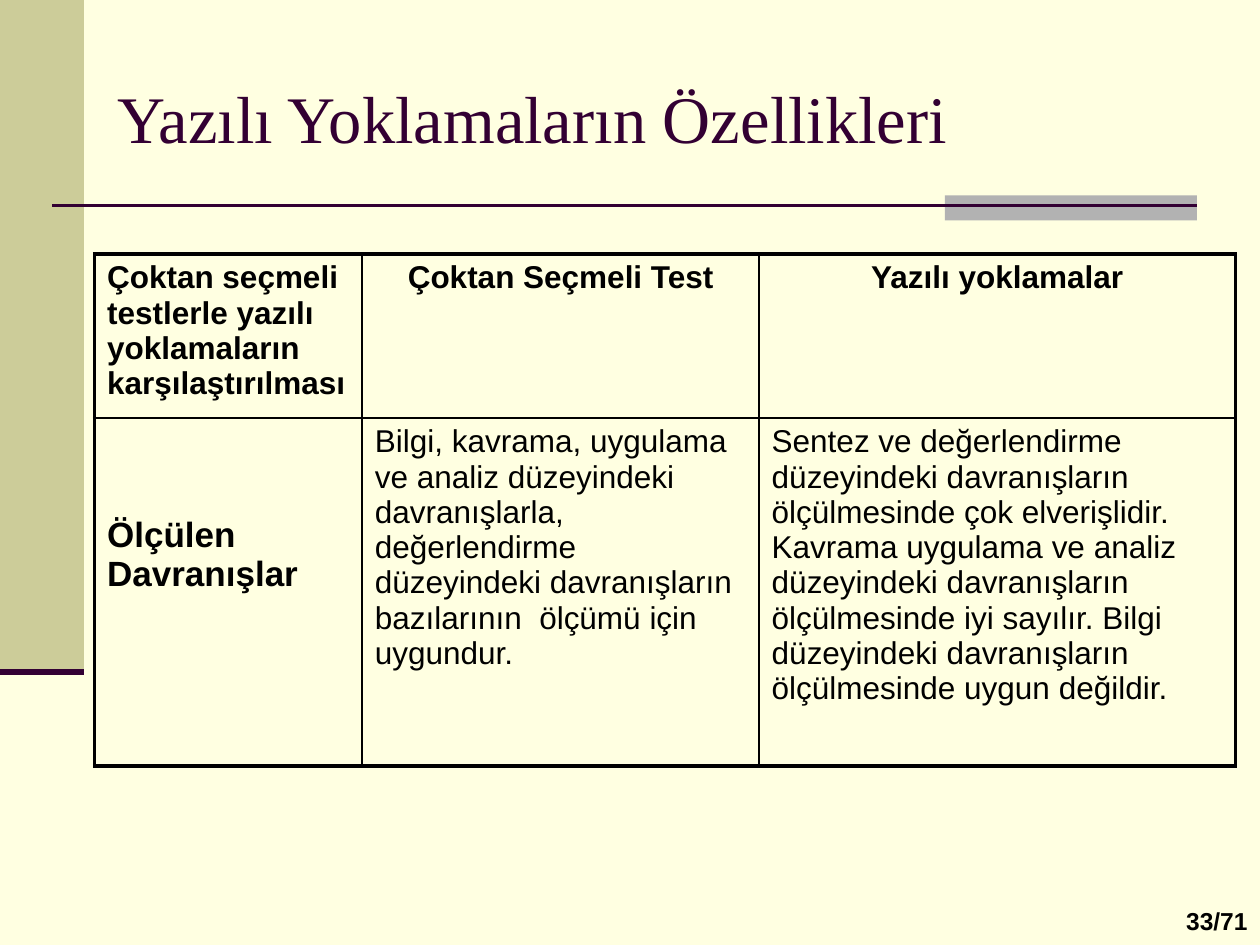
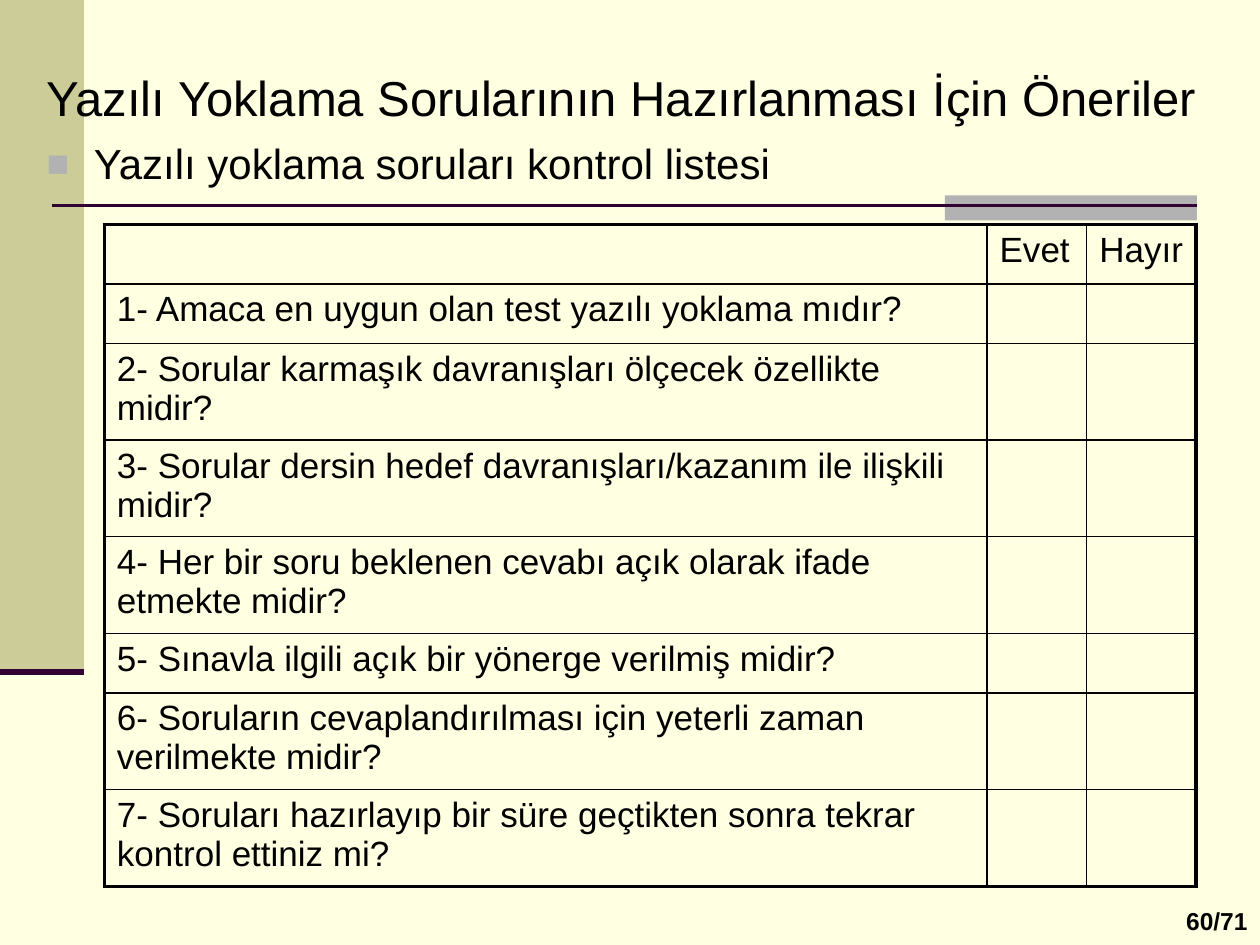
from lxml import etree
from pptx import Presentation
from pptx.dml.color import RGBColor
from pptx.enum import shapes, text
from pptx.oxml import ns
from pptx.util import Pt

CREAM = RGBColor(0xFF, 0xFF, 0xE1)
KHAKI = RGBColor(0xCC, 0xCC, 0x99)
GREY = RGBColor(0xB2, 0xB2, 0xB2)
PLUM = RGBColor(0x33, 0x00, 0x33)
BLACK = RGBColor(0x00, 0x00, 0x00)
LEFT, CENTER, RIGHT = text.PP_ALIGN.LEFT, text.PP_ALIGN.CENTER, text.PP_ALIGN.RIGHT
OUTER, INNER = 2.25, 1


def write(paragraph, words, size, bold=False, color=BLACK, font="Arial", align=LEFT):
    paragraph.text = words
    paragraph.alignment = align
    for span in paragraph.runs:
        span.font.size = Pt(size)
        span.font.bold = bold
        span.font.name = font
        span.font.color.rgb = color


def add_grid(slide, left, top, widths, heights):
    """Add an unfilled table with a heavy frame and thin inner lines."""
    frame = slide.shapes.add_table(len(heights), len(widths), Pt(left), Pt(top),
                                   Pt(sum(widths)), Pt(sum(heights)))
    table = frame.table
    table.first_row = table.horz_banding = False
    for column, width in zip(table.columns, widths):
        column.width = Pt(width)
    for row, height in zip(table.rows, heights):
        row.height = Pt(height)
    last_row, last_column = len(heights) - 1, len(widths) - 1
    for r, row in enumerate(table.rows):
        for c, cell in enumerate(row.cells):
            on_frame = {"lnL": c == 0, "lnR": c == last_column,
                        "lnT": r == 0, "lnB": r == last_row}
            properties = cell._tc.get_or_add_tcPr()
            for side, heavy in on_frame.items():
                line = etree.SubElement(properties, ns.qn("a:" + side),
                                        w=str(Pt(OUTER if heavy else INNER)))
                fill = etree.SubElement(line, ns.qn("a:solidFill"))
                etree.SubElement(fill, ns.qn("a:srgbClr"), val=str(BLACK))
            cell.fill.background()
    return table


deck = Presentation()
deck.slide_width, deck.slide_height = Pt(720), Pt(540)

# Shared background, bands, rules and page number
for page_number in ("33/71", "60/71"):
    slide = deck.slides.add_slide(deck.slide_layouts[6])
    slide.background.fill.solid()
    slide.background.fill.fore_color.rgb = CREAM

    for left, top, width, height, color in ((0, 0, 48, 384, KHAKI),
                                            (540, 111.6, 144, 14.4, GREY)):
        band = slide.shapes.add_shape(shapes.MSO_SHAPE.RECTANGLE,
                                      Pt(left), Pt(top), Pt(width), Pt(height))
        band.shadow.inherit = False
        band.fill.solid()
        band.fill.fore_color.rgb = color
        band.line.fill.background()

    for start, end, y, weight in ((30, 684, 117.6, 1.5), (0, 48, 384, 3.5)):
        rule = slide.shapes.add_connector(shapes.MSO_CONNECTOR.STRAIGHT,
                                          Pt(start), Pt(y), Pt(end), Pt(y))
        rule.line.color.rgb = PLUM
        rule.line.width = Pt(weight)
        etree.SubElement(rule._element.spPr, ns.qn("a:effectLst"))

    number_box = slide.shapes.add_textbox(Pt(660), Pt(514), Pt(60), Pt(24))
    number_box.text_frame.word_wrap = True
    write(number_box.text_frame.paragraphs[0], page_number, 14, bold=True, align=RIGHT)

comparison_slide, checklist_slide = deck.slides

# Comparison of multiple choice and written tests
title_box = comparison_slide.shapes.add_textbox(Pt(60), Pt(21.6), Pt(660), Pt(90))
title_box.text_frame.word_wrap = True
title_box.text_frame.vertical_anchor = text.MSO_ANCHOR.MIDDLE
write(title_box.text_frame.paragraphs[0], "Yazılı Yoklamaların Özellikleri", 38,
      color=PLUM, font="Times New Roman")

comparison = add_grid(comparison_slide, 54, 145.2, (153, 226.8, 272.2), (90.4, 198.8))
headings = ("Çoktan seçmeli testlerle yazılı yoklamaların karşılaştırılması",
            "Çoktan Seçmeli Test", "Yazılı yoklamalar")
behaviours = (
    "Ölçülen Davranışlar",
    "Bilgi, kavrama, uygulama ve analiz düzeyindeki davranışlarla, değerlendirme "
    "düzeyindeki davranışların bazılarının  ölçümü için uygundur.",
    "Sentez ve değerlendirme düzeyindeki davranışların ölçülmesinde çok elverişlidir. "
    "Kavrama uygulama ve analiz düzeyindeki davranışların ölçülmesinde iyi sayılır. "
    "Bilgi düzeyindeki davranışların ölçülmesinde uygun değildir.")
for c, (heading, behaviour) in enumerate(zip(headings, behaviours)):
    write(comparison.cell(0, c).text_frame.paragraphs[0], heading, 18, bold=True,
          align=CENTER if c else LEFT)
    write(comparison.cell(1, c).text_frame.paragraphs[0], behaviour,
          18 if c else 20, bold=c == 0)
comparison.cell(1, 0).margin_top = Pt(56)

# Checklist for written test questions
heading_box = checklist_slide.shapes.add_textbox(Pt(19.6), Pt(31.8), Pt(686), Pt(79))
heading_frame = heading_box.text_frame
heading_frame.word_wrap = True
heading_frame.margin_top = Pt(6.7)
write(heading_frame.paragraphs[0],
      "Yazılı Yoklama Sorularının Hazırlanması İçin Öneriler", 28)
bullet = heading_frame.add_paragraph()
write(bullet, "Yazılı yoklama soruları kontrol listesi", 24)
bullet.space_before = Pt(6.7)
bullet_properties = bullet._p.get_or_add_pPr()
bullet_properties.set("marL", str(Pt(27)))
bullet_properties.set("indent", str(Pt(-27)))
bullet_color = etree.SubElement(bullet_properties, ns.qn("a:buClr"))
etree.SubElement(bullet_color, ns.qn("a:srgbClr"), val=str(GREY))
etree.SubElement(bullet_properties, ns.qn("a:buSzPct"), val="90000")
etree.SubElement(bullet_properties, ns.qn("a:buFont"), typeface="Arial")
etree.SubElement(bullet_properties, ns.qn("a:buChar"), char="■")

questions = (
    "1- Amaca en uygun olan test yazılı yoklama mıdır?",
    "2- Sorular karmaşık davranışları ölçecek özellikte midir?",
    "3- Sorular dersin hedef davranışları/kazanım ile ilişkili midir?",
    "4- Her bir soru beklenen cevabı açık olarak ifade etmekte midir?",
    "5- Sınavla ilgili açık bir yönerge verilmiş midir?",
    "6- Soruların cevaplandırılması için yeterli zaman verilmekte midir?",
    "7- Soruları hazırlayıp bir süre geçtikten sonra tekrar kontrol ettiniz mi?")
ONE_LINE, TWO_LINES = 34, 51.8
row_heights = [ONE_LINE] + [TWO_LINES if len(question) > 50 else ONE_LINE
                            for question in questions]
checklist = add_grid(checklist_slide, 59.6, 128.2, (504.4, 57, 62.4), row_heights)
for c, answer in enumerate(("Evet", "Hayır"), start=1):
    write(checklist.cell(0, c).text_frame.paragraphs[0], answer, 20)
for r, question in enumerate(questions, start=1):
    write(checklist.cell(r, 0).text_frame.paragraphs[0], question, 20)

deck.save("out.pptx")
